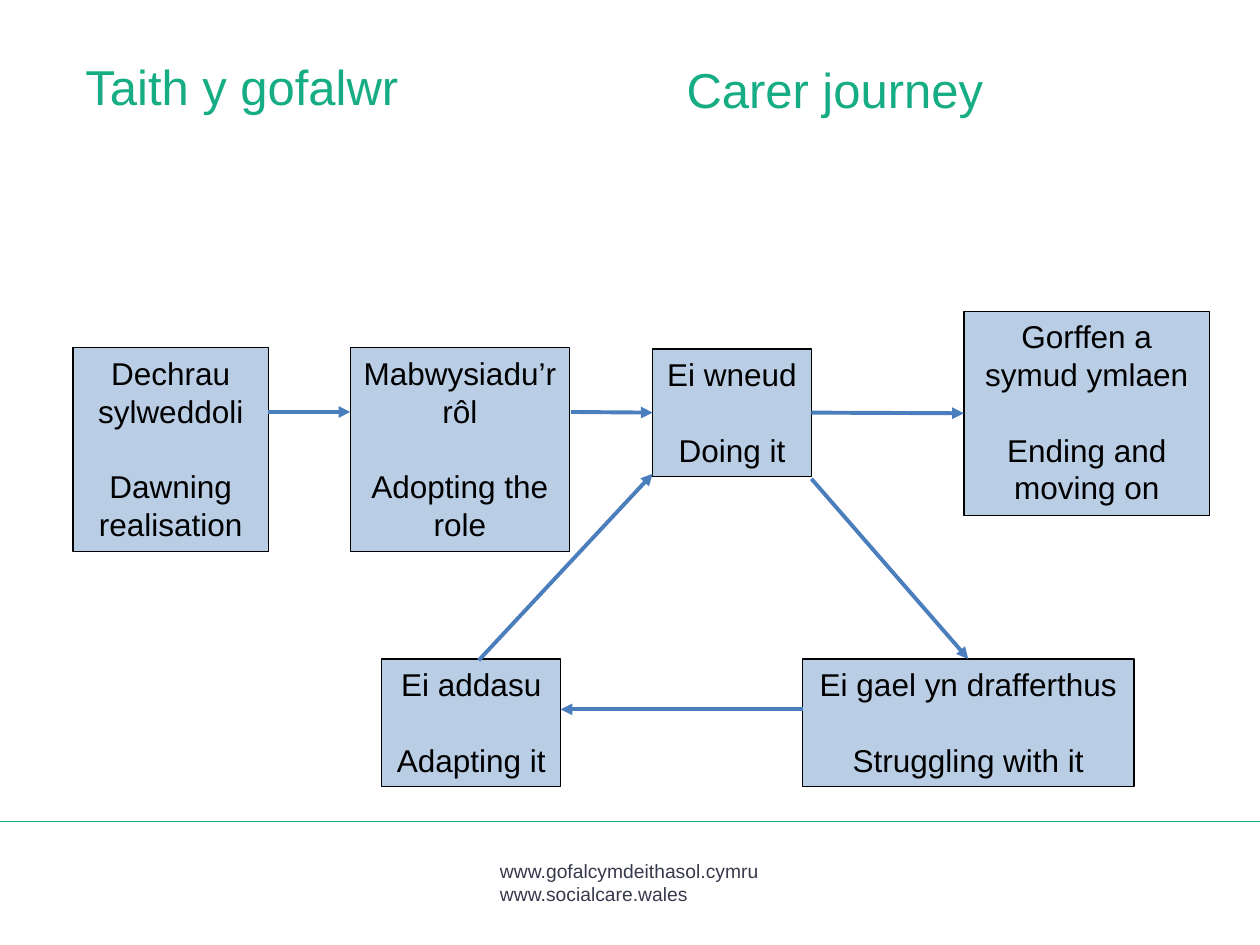
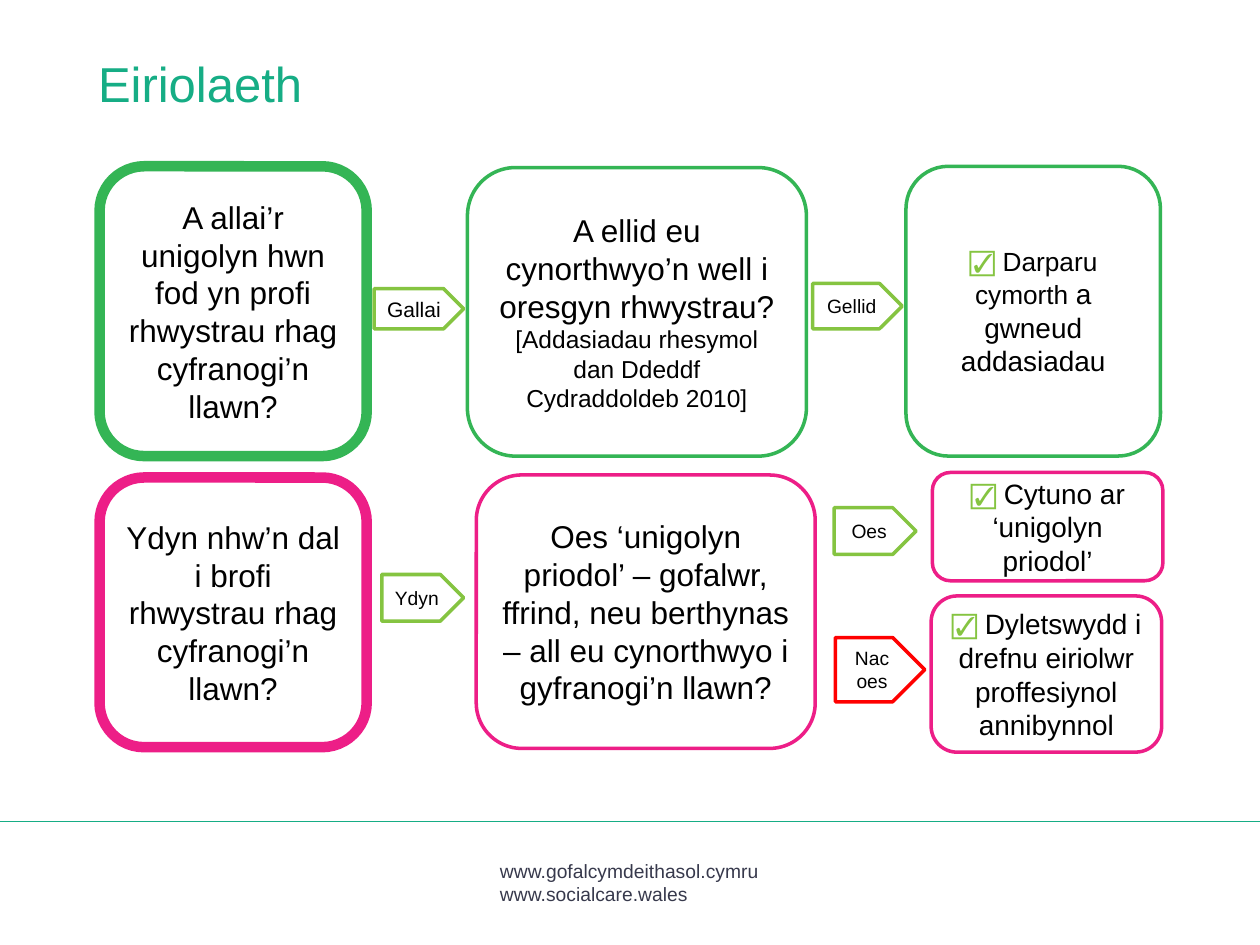
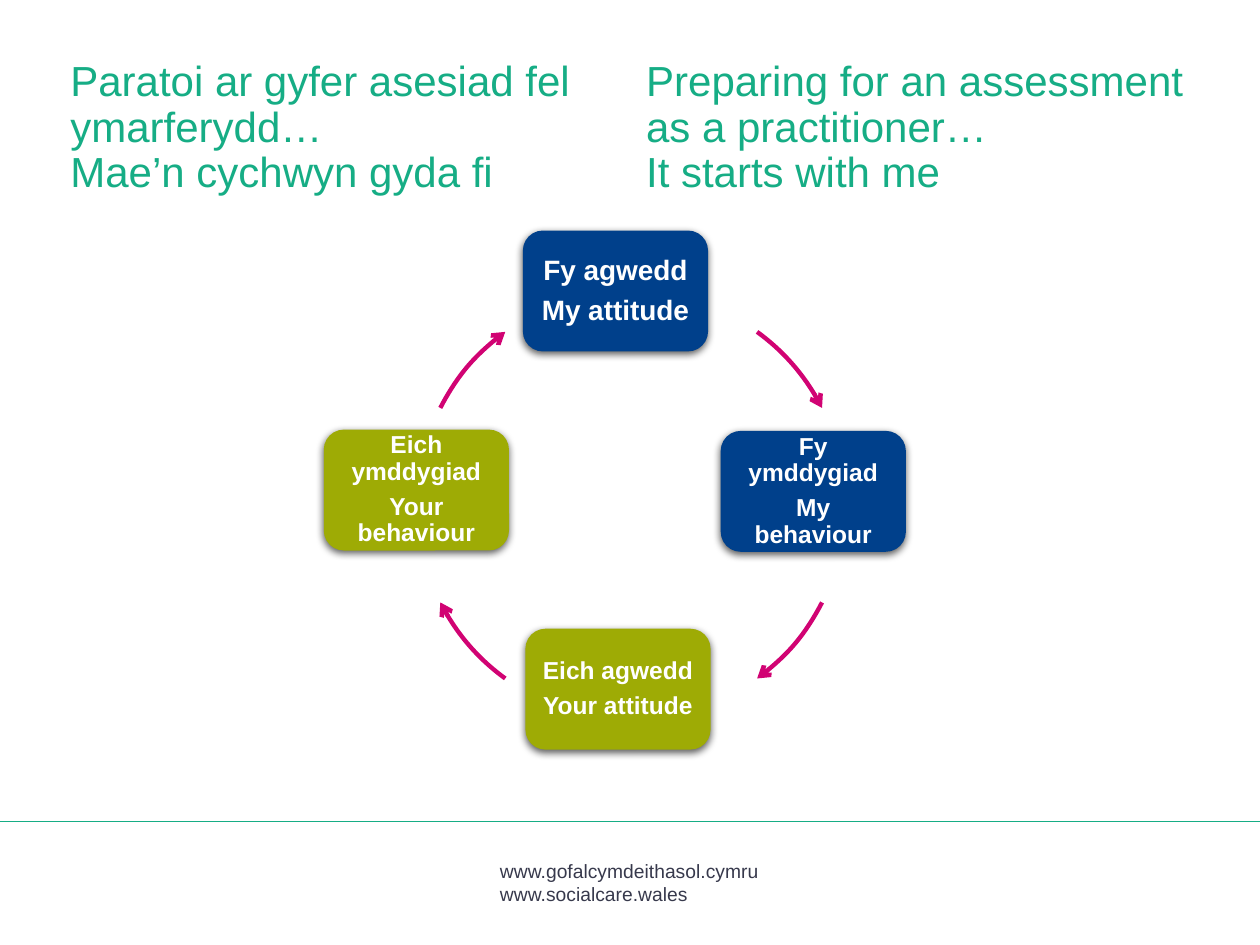
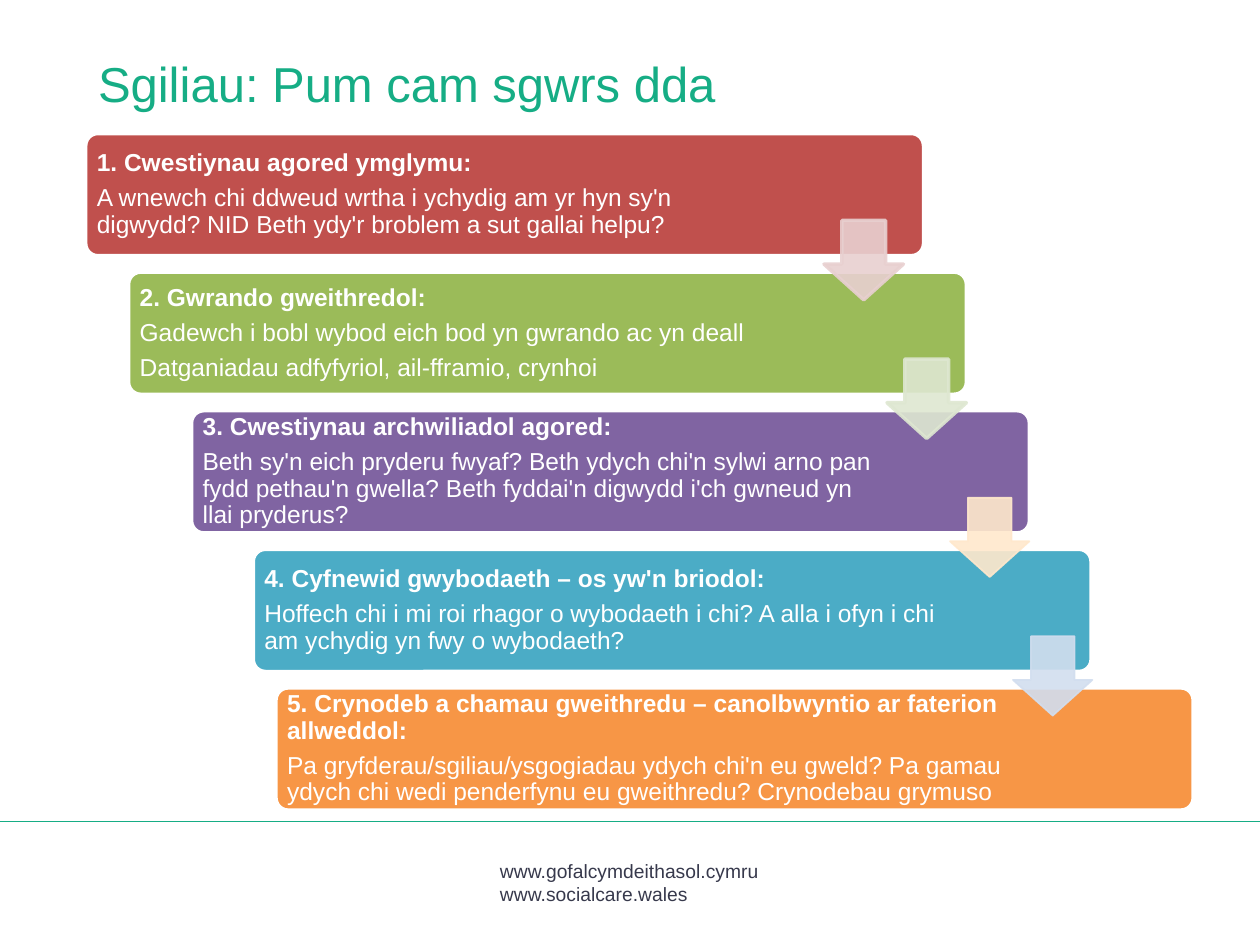
import math
from dataclasses import dataclass

import lxml.etree
import pptx
import pptx.dml.color
import pptx.enum.shapes
import pptx.enum.text
import pptx.oxml.ns
import pptx.util

Inches = pptx.util.Inches
Pt = pptx.util.Pt
qn = pptx.oxml.ns.qn
SHAPE = pptx.enum.shapes.MSO_SHAPE
STRAIGHT = pptx.enum.shapes.MSO_CONNECTOR.STRAIGHT
ALIGN = pptx.enum.text.PP_ALIGN
ANCHOR = pptx.enum.text.MSO_ANCHOR


@dataclass(frozen=True)
class Theme:
    font: str = "Arial"
    teal: str = "16AD85"
    slate: str = "37394C"
    black: str = "000000"
    white: str = "FFFFFF"
    pale_blue: str = "B9CDE5"
    arrow_blue: str = "4B7EBC"
    green: str = "34B555"
    pink: str = "ED1E87"
    lime: str = "85C441"
    red: str = "FF0000"
    navy: str = "00408B"
    olive: str = "9EAB05"
    magenta: str = "D10373"
    title: int = 28
    long_title: int = 24
    body: int = 18
    outcome: int = 16
    small: int = 14
    tick: int = 15
    footer: int = 11


THEME = Theme()

FOOTER = ["www.gofalcymdeithasol.cymru", "www.socialcare.wales"]

# Titles: text, box, size
JOURNEY_TITLES = [
    ("Taith y gofalwr", (0.58, 0.45, 4.02, 1), THEME.title),
    ("Carer journey", (5.35, 0.48, 4.01, 0.94), THEME.title),
]
ADVOCACY_TITLES = [("Eiriolaeth", (0.68, 0.43, 6.35, 0.54), THEME.title)]
ATTITUDE_TITLES = [
    ("Paratoi ar gyfer asesiad fel ymarferydd…\vMae’n cychwyn gyda fi",
     (0.46, 0.43, 4.45, 1.12), THEME.long_title),
    ("Preparing for an assessment as a practitioner…\vIt starts with me",
     (5.03, 0.43, 4.58, 1.12), THEME.long_title),
]
SKILLS_TITLES = [("Sgiliau: Pum cam sgwrs dda", (0.68, 0.43, 9.53, 1), THEME.title)]

# Carer journey: Welsh and English wording, box
STAGES = {
    "dawning": (["Dechrau sylweddoli", "Dawning realisation"], (0.58, 2.76, 1.55, 1.62)),
    "adopting": (["Mabwysiadu’r rôl", "Adopting the role"], (2.78, 2.76, 1.74, 1.62)),
    "doing": (["Ei wneud", "Doing it"], (5.18, 2.77, 1.26, 1.01)),
    "ending": (["Gorffen a symud ymlaen", "Ending and moving on"], (7.65, 2.47, 1.95, 1.62)),
    "struggling": (["Ei gael yn drafferthus", "Struggling with it"], (6.37, 5.23, 2.63, 1.01)),
    "adapting": (["Ei addasu", "Adapting it"], (3.03, 5.23, 1.42, 1.01)),
}
# Each end is a point, or a stage and the side it is joined to
MOVES = [
    ((2.13, 3.27), (2.78, 3.27)),
    ((4.53, 3.27), ("doing", 1)),
    (("doing", 3), ("ending", 1)),
    ((6.44, 3.8), ("struggling", 0)),
    ((6.37, 5.63), (4.45, 5.63)),
    ((3.8, 5.24), (5.18, 3.76)),
]

# Advocacy: paragraphs with sizes, box, outline colour, outline width
QUESTIONS = [
    ([("A allai’r unigolyn hwn fod yn profi rhwystrau rhag cyfranogi’n llawn?", THEME.body)],
     (0.79, 1.32, 2.12, 2.3), THEME.green, 6),
    ([("Ydyn nhw’n dal i brofi rhwystrau rhag cyfranogi’n llawn?", THEME.body)],
     (0.79, 3.79, 2.12, 2.14), THEME.pink, 6),
    ([("A ellid eu cynorthwyo’n well i oresgyn rhwystrau?", THEME.body),
      ("[Addasiadau rhesymol dan Ddeddf Cydraddoldeb 2010]", THEME.small)],
     (3.71, 1.33, 2.69, 2.29), THEME.green, 2),
    ([("Oes ‘unigolyn priodol’ – gofalwr, ffrind, neu berthynas – all eu cynorthwyo "
       "i gyfranogi’n llawn?", THEME.body)],
     (3.78, 3.77, 2.69, 2.17), THEME.pink, 2),
]
# Runs after the tick with sizes, box, outline colour
OUTCOMES = [
    ([("Darparu cymorth ", THEME.tick), ("a gwneud addasiadau", THEME.outcome)],
     (7.19, 1.32, 2.02, 2.3), THEME.green),
    ([("Cytuno ar ‘unigolyn priodol’", THEME.outcome)], (7.4, 3.75, 1.83, 0.86), THEME.pink),
    ([("Dyletswydd i drefnu eiriolwr proffesiynol annibynnol", THEME.outcome)],
     (7.39, 4.73, 1.83, 1.24), THEME.pink),
]
ANSWERS = [
    ("Gallai", (2.97, 2.29, 0.71, 0.32), THEME.lime, 12),
    ("Ydyn", (3.03, 4.56, 0.65, 0.37), THEME.lime, 11),
    ("Oes", (6.62, 4.03, 0.65, 0.37), THEME.lime, 11),
    ("Gellid", (6.45, 2.25, 0.71, 0.36), THEME.lime, 11),
    ("Nac oes", (6.63, 5.06, 0.71, 0.51), THEME.red, 11),
]

# Attitude cycle: wording, left, top, fill, size
CYCLE = [
    (["Fy agwedd", "My attitude"], 4.15, 1.83, THEME.navy, 16),
    (["Fy ymddygiad", "My behaviour"], 5.72, 3.42, THEME.navy, 14),
    (["Eich agwedd", "Your attitude"], 4.17, 4.99, THEME.olive, 14),
    (["Eich ymddygiad", "Your behaviour"], 2.57, 3.41, THEME.olive, 14),
]
CYCLE_SIZE = (1.47, 0.96)
CYCLE_CENTRE, CYCLE_RADIUS = (5.01, 4.01), 1.7
CYCLE_ARCS = [(306, 333), (27, 54), (126, 153), (207, 234)]

# Conversation steps: heading, sentences, left, width, fill
STEPS = [
    ("1. Cwestiynau agored ymglymu:",
     ["A wnewch chi ddweud wrtha i ychydig am yr hyn sy'n digwydd? "
      "NID Beth ydy'r broblem a sut gallai helpu?"], 0.68, 6.65, "C0504D"),
    ("2. Gwrando gweithredol:",
     ["Gadewch i bobl wybod eich bod yn gwrando ac yn deall",
      "Datganiadau adfyfyriol, ail-fframio, crynhoi"], 1.02, 6.65, "9BBB59"),
    ("3. Cwestiynau archwiliadol agored:",
     ["Beth sy'n eich pryderu fwyaf? Beth ydych chi'n sylwi arno pan fydd pethau'n gwella? "
      "Beth fyddai'n digwydd i'ch gwneud yn llai pryderus?"], 1.52, 6.65, "8064A2"),
    ("4. Cyfnewid gwybodaeth – os yw'n briodol:",
     ["Hoffech chi i mi roi rhagor o wybodaeth i chi? "
      "A alla i ofyn i chi am ychydig yn fwy o wybodaeth?"], 2.01, 6.65, "4BACC6"),
    ("5. Crynodeb a chamau gweithredu – canolbwyntio ar faterion allweddol:",
     ["Pa gryfderau/sgiliau/ysgogiadau ydych chi'n eu gweld? "
      "Pa gamau ydych chi wedi penderfynu eu gweithredu? Crynodebau grymuso"],
     2.19, 7.28, "F79646"),
]
STEP_TOP, STEP_PITCH, STEP_HEIGHT = 1.06, 1.1, 0.97
# Step arrows: colour, outline width
STEP_ARROWS = [("E8D0D0", 2), ("DEE7D1", 2), ("FFE8CC", 1), ("D2DEEF", 1)]


def rgb(colour):
    return pptx.dml.color.RGBColor.from_string(colour)


def inches(box):
    return [Inches(length) for length in box]


def style_run(run, size, colour, bold=False):
    run.font.name = THEME.font
    run.font.size = Pt(size)
    run.font.bold = bold
    run.font.color.rgb = rgb(colour)


def write(box, lines, size, colour=THEME.black, bold=False, align=ALIGN.LEFT,
          anchor=ANCHOR.TOP, spacing=None, after=None):
    frame = box.text_frame
    frame.word_wrap = True
    frame.vertical_anchor = anchor
    frame.text = "\n".join(lines)
    for paragraph in frame.paragraphs:
        paragraph.alignment = align
        paragraph.line_spacing = spacing
        paragraph.space_after = after
        for run in paragraph.runs:
            style_run(run, size, colour, bold)
    return frame


def set_margins(frame, left, right, vertical=0.05):
    frame.margin_left, frame.margin_right = Inches(left), Inches(right)
    frame.margin_top = frame.margin_bottom = Inches(vertical)


def add_shape(slide, kind, box, fill=None, line=None, width=1):
    shape = slide.shapes.add_shape(kind, *inches(box))
    shape.shadow.inherit = False
    if fill:
        shape.fill.solid()
        shape.fill.fore_color.rgb = rgb(fill)
    else:
        shape.fill.background()
    if line:
        shape.line.color.rgb = rgb(line)
        shape.line.width = Pt(width)
    else:
        shape.line.fill.background()
    return shape


def add_line(slide, start, end, colour, width):
    line = slide.shapes.add_connector(STRAIGHT, *inches(start + end))
    line.line.color.rgb = rgb(colour)
    line.line.width = Pt(width)
    lxml.etree.SubElement(line.element.spPr, qn("a:effectLst"))
    return line


def add_arrowhead(shape, kind):
    outline = shape.element.spPr.find(qn("a:ln"))
    lxml.etree.SubElement(outline, qn("a:tailEnd"), type=kind)


def add_shadow(shape):
    effects = shape.element.spPr.find(qn("a:effectLst"))
    shadow = lxml.etree.SubElement(effects, qn("a:outerShdw"), blurRad=str(Pt(4.5)),
                                   dist=str(Pt(1.5)), dir="5400000", rotWithShape="0")
    colour = lxml.etree.SubElement(shadow, qn("a:srgbClr"), val=THEME.black)
    lxml.etree.SubElement(colour, qn("a:alpha"), val="63000")


def fade(shape, percent):
    """Make the fill and outline of a shape partly transparent."""
    for colour in shape.element.spPr.iter(qn("a:srgbClr")):
        lxml.etree.SubElement(colour, qn("a:alpha"), val=str(percent * 1000))


def start_slide(deck, titles):
    """Add a slide with the shared footer, rule and title style."""
    slide = deck.slides.add_slide(deck.slide_layouts[6])
    footer = slide.shapes.add_textbox(*inches((3.87, 6.77, 2.26, 0.46)))
    write(footer, FOOTER, THEME.footer, THEME.slate)
    add_line(slide, (0, 6.52), (10, 6.52), THEME.teal, 1)
    for words, box, size in titles:
        title = slide.shapes.add_textbox(*inches(box))
        write(title, [words], size, THEME.teal, spacing=0.9)
    return slide


def build_journey(deck):
    slide = start_slide(deck, JOURNEY_TITLES)
    stages = {}
    for key, (lines, box) in STAGES.items():
        stage = add_shape(slide, SHAPE.RECTANGLE, box, THEME.pale_blue, THEME.black, 0.75)
        frame = write(stage, lines, THEME.body, align=ALIGN.CENTER)
        frame.paragraphs[1].space_before = Pt(21.5)
        stages[key] = stage

    for start, end in MOVES:
        points = [(0, 0) if place[0] in stages else place for place in (start, end)]
        move = add_line(slide, *points, THEME.arrow_blue, 2.25)
        add_arrowhead(move, "triangle")
        for place, connect in ((start, move.begin_connect), (end, move.end_connect)):
            if place[0] in stages:
                connect(stages[place[0]], place[1])


def build_advocacy(deck):
    slide = start_slide(deck, ADVOCACY_TITLES)
    centred = {"align": ALIGN.CENTER, "anchor": ANCHOR.MIDDLE}
    for paragraphs, box, colour, width in QUESTIONS:
        question = add_shape(slide, SHAPE.ROUNDED_RECTANGLE, box, THEME.white, colour, width)
        frame = write(question, [words for words, _ in paragraphs], THEME.body, **centred)
        for paragraph, (_, size) in zip(frame.paragraphs, paragraphs):
            paragraph.runs[0].font.size = Pt(size)

    for parts, box, colour in OUTCOMES:
        outcome = add_shape(slide, SHAPE.ROUNDED_RECTANGLE, box, THEME.white, colour, 2)
        frame = write(outcome, ["☑ "], THEME.tick, THEME.lime, bold=True, **centred)
        for words, size in parts:
            run = frame.paragraphs[0].add_run()
            run.text = words
            style_run(run, size, THEME.black)

    for word, box, colour, size in ANSWERS:
        answer = add_shape(slide, SHAPE.PENTAGON, box, None, colour, 2)
        set_margins(write(answer, [word], size, **centred), 0.05, 0.05)


def build_attitude(deck):
    slide = start_slide(deck, ATTITUDE_TITLES)
    for lines, left, top, fill, size in CYCLE:
        card = add_shape(slide, SHAPE.ROUNDED_RECTANGLE, (left, top) + CYCLE_SIZE, fill)
        add_shadow(card)
        frame = write(card, lines, size, THEME.white, bold=True, align=ALIGN.CENTER,
                      anchor=ANCHOR.MIDDLE, spacing=0.9, after=Pt(0.35 * size))
        set_margins(frame, 0.06, 0.06, 0.06)

    corner = tuple(middle - CYCLE_RADIUS for middle in CYCLE_CENTRE)
    ring = corner + (2 * CYCLE_RADIUS, 2 * CYCLE_RADIUS)
    for angles in CYCLE_ARCS:
        arc = add_shape(slide, SHAPE.ARC, ring, None, THEME.magenta, 2.5)
        for index, degrees in enumerate(angles):
            arc.adjustments[index] = degrees * 0.6  # 60000 units a degree, over 100000
        add_arrowhead(arc, "arrow")


def build_skills(deck):
    slide = start_slide(deck, SKILLS_TITLES)
    for row, (heading, sentences, left, width, fill) in enumerate(STEPS):
        box = (left, STEP_TOP + row * STEP_PITCH, width, STEP_HEIGHT)
        step = add_shape(slide, SHAPE.ROUNDED_RECTANGLE, box, fill, THEME.white, 2)
        step.adjustments[0] = 0.1
        frame = write(step, [heading] + sentences, THEME.small, THEME.white,
                      anchor=ANCHOR.MIDDLE, spacing=0.9, after=Pt(0.35 * THEME.small))
        frame.paragraphs[0].runs[0].font.bold = True
        set_margins(frame, 0.06, 1.17, 0.06)

    for row, (colour, width) in enumerate(STEP_ARROWS):
        box = (6.54 + 0.5 * row, 1.75 + STEP_PITCH * row, 0.63, 0.63)
        arrow = add_shape(slide, SHAPE.DOWN_ARROW, box, colour, colour, width)
        arrow.adjustments[0], arrow.adjustments[1] = 0.55, 0.45
        fade(arrow, 90)


def main():
    deck = pptx.Presentation()
    deck.slide_width, deck.slide_height = Inches(10), Inches(7.5)
    for build in (build_journey, build_advocacy, build_attitude, build_skills):
        build(deck)
    deck.save("out.pptx")


if __name__ == "__main__":
    main()
